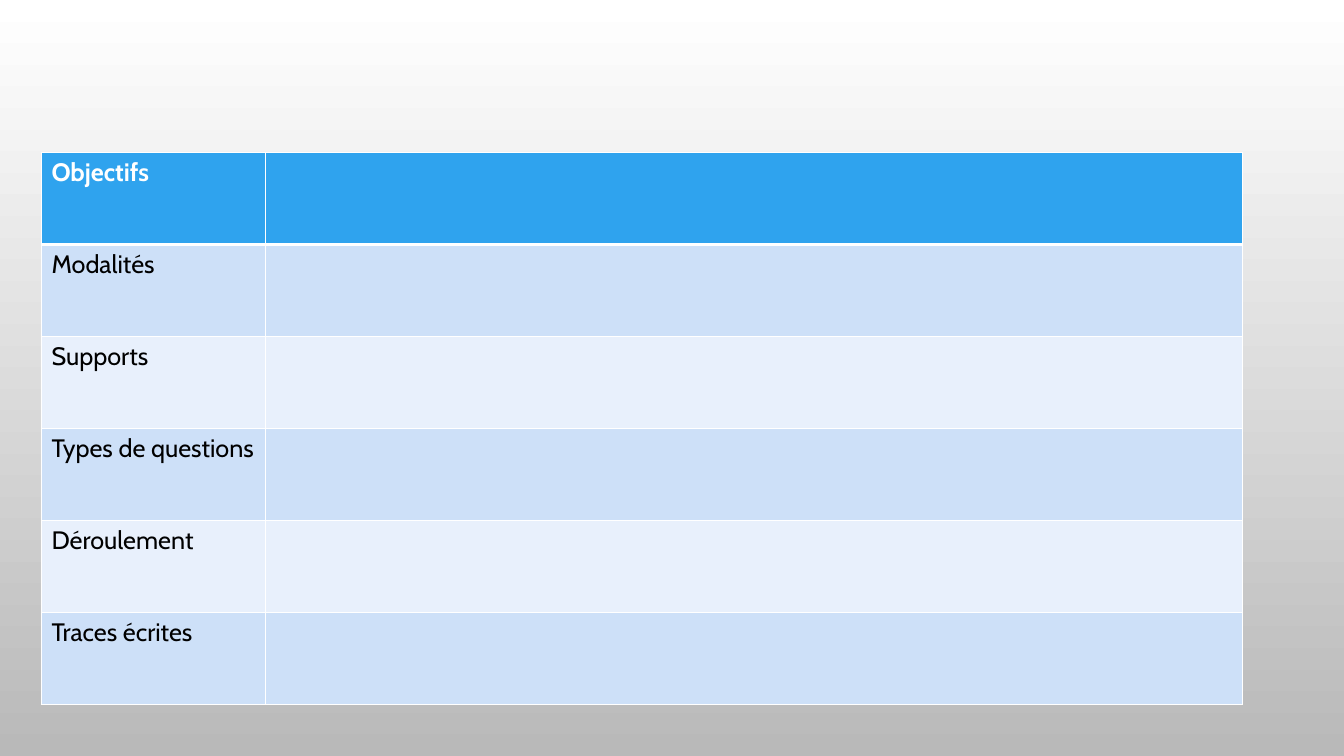
from lxml.etree import SubElement
from pptx import Presentation
from pptx.dml.color import RGBColor
from pptx.oxml.ns import qn
from pptx.util import Pt

WHITE = RGBColor(0xFF, 0xFF, 0xFF)
BLACK = RGBColor(0, 0, 0)
GREY = RGBColor(0xB9, 0xB9, 0xB9)
BLUE = RGBColor(0x2F, 0xA3, 0xEE)
BAND_DARK = RGBColor(0xCD, 0xE0, 0xF8)
BAND_LIGHT = RGBColor(0xE8, 0xF0, 0xFC)

FONT = "Cabin"
LABELS = ["Objectifs", "Modalités", "Supports", "Types de questions",
          "Déroulement", "Traces écrites"]
COL_WIDTHS = [Pt(159.8), Pt(698.4)]
ROW_HEIGHT = Pt(65.7)


def set_background(s):
    """Fill the slide with a vertical gradient from white to grey."""
    fill = s.background.fill
    fill.gradient()
    fill.gradient_angle = 270
    for stop, color in zip(fill.gradient_stops, (WHITE, GREY)):
        stop.color.rgb = color


def set_borders(cell, top, bottom):
    """Draw white cell borders with the given top and bottom widths."""
    tc_pr = cell._tc.get_or_add_tcPr()
    for side, width in zip("LRTB", (Pt(1), Pt(1), top, bottom)):
        ln = SubElement(tc_pr, qn(f"a:ln{side}"), w=str(width))
        SubElement(SubElement(ln, qn("a:solidFill")), qn("a:srgbClr"), val=str(WHITE))


def style_cell(cell, row):
    """Give a cell the borders, fill and font of its row."""
    header = row == 0
    set_borders(cell, Pt(3 if row == 1 else 1), Pt(3 if header else 1))
    cell.fill.solid()
    cell.fill.fore_color.rgb = BLUE if header else BAND_DARK if row % 2 else BAND_LIGHT
    font = cell.text_frame.paragraphs[0].font
    font.name = FONT
    font.size = Pt(18)
    font.bold = header
    font.color.rgb = WHITE if header else BLACK
    for r in cell.text_frame.paragraphs[0].runs:
        r.font.name = FONT
        r.font.size = Pt(18)
        r.font.bold = header
        r.font.color.rgb = WHITE if header else BLACK


def add_lesson_table(s):
    """Add the lesson plan table with its labels in the first column."""
    table = s.shapes.add_table(len(LABELS), len(COL_WIDTHS), Pt(29.6), Pt(109),
                               sum(COL_WIDTHS), ROW_HEIGHT * len(LABELS)).table
    table.first_row = table.horz_banding = False
    for column, width in zip(table.columns, COL_WIDTHS):
        column.width = width
    for i, label in enumerate(LABELS):
        table.rows[i].height = ROW_HEIGHT
        table.cell(i, 0).text_frame.text = label
        for cell in table.rows[i].cells:
            style_cell(cell, i)


def main():
    """Build the slide and save it."""
    prs = Presentation()
    prs.slide_width, prs.slide_height = Pt(960), Pt(540)
    s = prs.slides.add_slide(prs.slide_layouts[6])
    set_background(s)
    add_lesson_table(s)
    prs.save("out.pptx")


if __name__ == "__main__":
    main()
